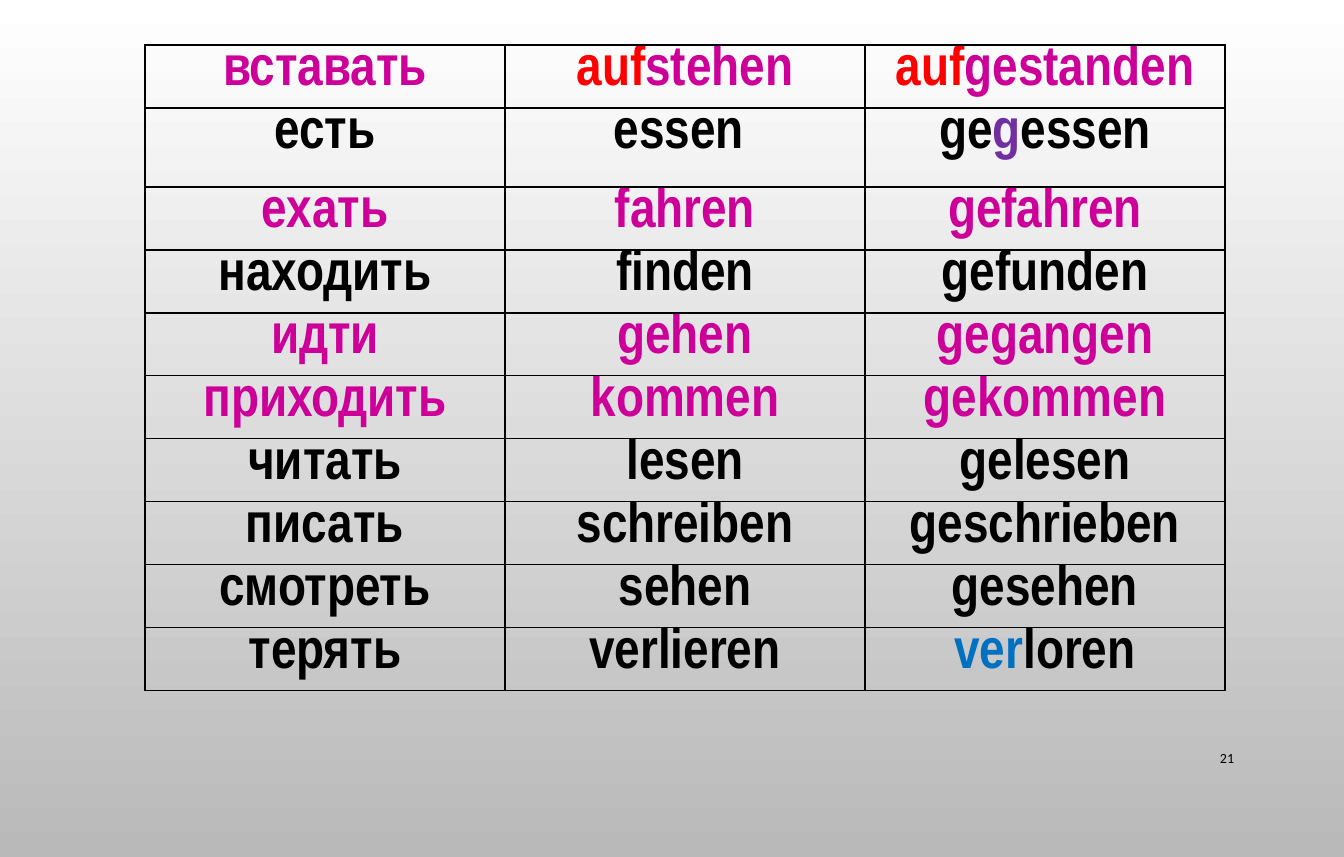
from lxml import etree
from pptx import Presentation
from pptx.dml.color import RGBColor
from pptx.enum.text import MSO_ANCHOR, PP_ALIGN
from pptx.oxml.ns import qn
from pptx.util import Pt

PX = 9144000 / 1008
CENTER, RIGHT = PP_ALIGN.CENTER, PP_ALIGN.RIGHT
TOP, MIDDLE = MSO_ANCHOR.TOP, MSO_ANCHOR.MIDDLE

COLORS = {
    "black": "000000", "magenta": "CC0099", "red": "FF0000",
    "purple": "7030A0", "blue": "0070C0",
    "sky": "FFFFFF", "ground": "B9B9B9",
}
VERB_FONT = {"name": "Arial Narrow", "size": Pt(40), "bold": True}
NUMBER_FONT = {"name": "Calibri", "size": Pt(10), "bold": False}
CELL_FORMAT = {"margin_top": 0, "margin_bottom": 0, "vertical_anchor": TOP}

# Row colour, then infinitive and participle; a tuple marks a part in its own colour.
VERBS = [
    ("magenta", ["вставать"], [("auf", "red"), "stehen"], [("auf", "red"), "gestanden"]),
    ("black", ["есть"], ["essen "], ["ge", ("g", "purple"), "essen"]),
    ("magenta", ["ехать"], ["fahren"], ["gefahren"]),
    ("black", ["находить"], ["finden"], ["gefunden"]),
    ("magenta", ["идти"], ["gehen"], ["gegangen"]),
    ("magenta", ["приходить"], ["kommen"], ["gekommen"]),
    ("black", ["читать"], ["lesen"], ["gelesen"]),
    ("black", ["писать"], ["schreiben"], ["geschrieben"]),
    ("black", ["смотреть"], ["sehen"], ["gesehen"]),
    ("black", ["терять"], ["verlieren"], [("ver", "blue"), "loren"]),
]
COLUMN_WIDTH, ROW_HEIGHT, TALL_ROW, TALL_HEIGHT = 360, 63, 1, 79


def px(*lengths):
    return [round(length * PX) for length in lengths]


def add_run(paragraph, text, color, font_format):
    run = paragraph.add_run()
    run.text = text
    for name, value in font_format.items():
        setattr(run.font, name, value)
    run.font.color.rgb = RGBColor.from_string(COLORS[color])


prs = Presentation()
prs.slide_width, prs.slide_height = px(1344, 857)
slide = prs.slides.add_slide(prs.slide_layouts[6])

backdrop = slide.background.fill
backdrop.gradient()
backdrop.gradient_angle = 270
for stop, color in zip(backdrop.gradient_stops, ("sky", "ground")):
    stop.color.rgb = RGBColor.from_string(COLORS[color])

table_height = ROW_HEIGHT * (len(VERBS) - 1) + TALL_HEIGHT
verb_table = slide.shapes.add_table(
    len(VERBS), 3, *px(145, 45, 3 * COLUMN_WIDTH, table_height)).table
verb_table.first_row = verb_table.horz_banding = False
for column in verb_table.columns:
    column.width = px(COLUMN_WIDTH)[0]

for row_index, (row_color, *forms) in enumerate(VERBS):
    height = TALL_HEIGHT if row_index == TALL_ROW else ROW_HEIGHT
    verb_table.rows[row_index].height = px(height)[0]
    for column_index, parts in enumerate(forms):
        cell = verb_table.cell(row_index, column_index)
        for name, value in CELL_FORMAT.items():
            setattr(cell, name, value)
        cell.fill.background()
        cell_properties = cell._tc.get_or_add_tcPr()
        for position, side in enumerate(("lnL", "lnR", "lnT", "lnB")):
            border = etree.Element(qn(f"a:{side}"), w=str(Pt(1)))
            border_fill = etree.SubElement(border, qn("a:solidFill"))
            etree.SubElement(border_fill, qn("a:srgbClr"), val=COLORS["black"])
            cell_properties.insert(position, border)
        paragraph = cell.text_frame.paragraphs[0]
        paragraph.alignment = CENTER
        for part in parts:
            text, color = part if isinstance(part, tuple) else (part, row_color)
            add_run(paragraph, text, color, VERB_FONT)

page_number = slide.shapes.add_textbox(*px(1159, 735, 85, 45)).text_frame
page_number.word_wrap = True
page_number.vertical_anchor = MIDDLE
page_number.paragraphs[0].alignment = RIGHT
add_run(page_number.paragraphs[0], "21", "black", NUMBER_FONT)

prs.save("out.pptx")
